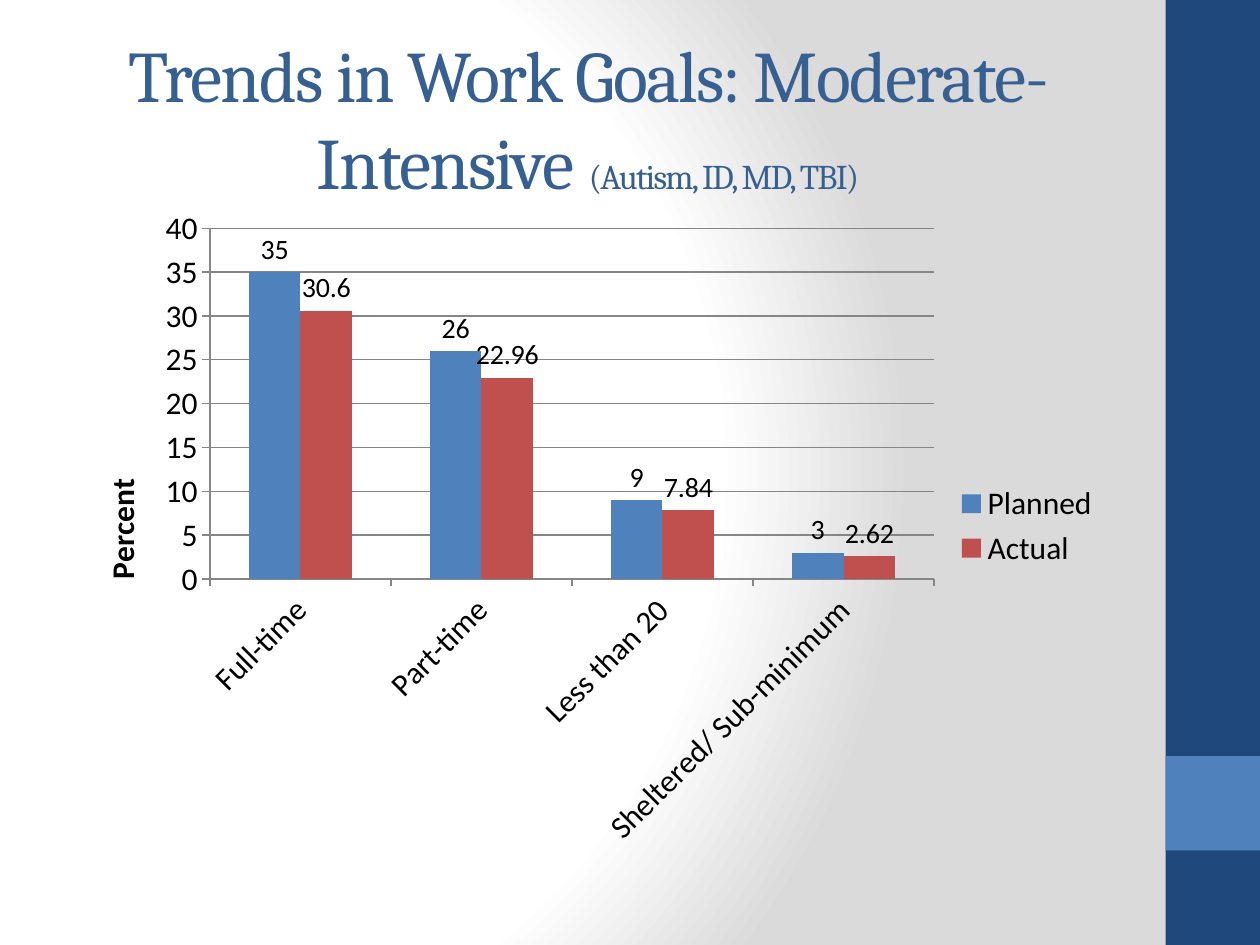
from lxml.etree import SubElement
from pptx import Presentation
from pptx.chart.data import CategoryChartData
from pptx.dml.color import RGBColor
from pptx.enum.chart import XL_CHART_TYPE, XL_LABEL_POSITION, XL_LEGEND_POSITION, XL_TICK_MARK
from pptx.enum.shapes import MSO_SHAPE
from pptx.enum.text import MSO_ANCHOR, PP_ALIGN
from pptx.oxml import parse_xml
from pptx.oxml.ns import nsdecls, qn
from pptx.util import Emu, Pt

PX = 9144  # 100 px to the inch
NAVY, BLUE, RED = "1F497D", "4F81BD", "C0504D"
TITLE_BLUE, BLACK, GRAY = "376092", "000000", "868686"


def px(*lengths):
    return [Emu(length * PX) for length in lengths]


def color(value):
    return RGBColor.from_string(value)


def set_layout(parent, before, inner=False, **fractions):
    """Place a chart part by fractions of the chart's size."""
    for old in parent.findall(qn("c:layout")):
        parent.remove(old)
    layout = parse_xml(f"<c:layout {nsdecls('c')}><c:manualLayout/></c:layout>")
    manual = layout[0]
    if inner:
        SubElement(manual, qn("c:layoutTarget"), val="inner")
    for name in ("x", "y"):
        SubElement(manual, qn(f"c:{name}Mode"), val="edge")
    for name, value in fractions.items():
        SubElement(manual, qn(f"c:{name}"), val=str(value))
    parent.insert(before, layout)


class SlideBuilder:
    title_font, chart_font = "Cambria", "Calibri"

    def __init__(self, slide):
        self.slide = slide

    def background(self, stops):
        gradient_stops = "".join(
            f'<a:gs pos="{position * 1000}"><a:srgbClr val="{value}"/></a:gs>'
            for position, value in stops)
        self.slide.element.cSld.insert(0, parse_xml(
            f'<p:bg {nsdecls("p", "a")}><p:bgPr><a:gradFill rotWithShape="1">'
            f'<a:gsLst>{gradient_stops}</a:gsLst><a:path path="circle">'
            '<a:fillToRect l="20000" t="50000" r="100000" b="50000"/></a:path>'
            '</a:gradFill><a:effectLst/></p:bgPr></p:bg>'))

    def rectangle(self, box, fill):
        shape = self.slide.shapes.add_shape(MSO_SHAPE.RECTANGLE, *px(*box))
        shape.shadow.inherit = False
        shape.fill.solid()
        shape.fill.fore_color.rgb = color(fill)
        shape.line.fill.background()

    def title(self, box, runs):
        frame = self.slide.shapes.add_textbox(*px(*box)).text_frame
        frame.word_wrap = True
        frame.vertical_anchor = MSO_ANCHOR.MIDDLE
        paragraph = frame.paragraphs[0]
        paragraph.alignment = PP_ALIGN.CENTER
        for text, size in runs:
            run = paragraph.add_run()
            run.text = text
            run.font.size = Pt(size)
            run.font.name = self.title_font
            run.font.color.rgb = color(TITLE_BLUE)
            run.font._element.set("spc", "-100")

    def style_font(self, font, size):
        font.size = Pt(size)
        font.name = self.chart_font
        font.color.rgb = color(BLACK)

    def style_line(self, line):
        line.color.rgb = color(GRAY)
        line.width = Pt(0.75)

    def column_chart(self, box, categories, series, axis_title):
        data = CategoryChartData()
        data.categories = categories
        for name, values, _ in series:
            data.add_series(name, values)
        chart = self.slide.shapes.add_chart(
            XL_CHART_TYPE.COLUMN_CLUSTERED, *px(*box), data).chart
        chart.has_title = False
        self.style_font(chart.font, 18)
        self.style_series(chart.plots[0], series)
        self.style_axes(chart, axis_title)
        chart.has_legend = True
        chart.legend.position = XL_LEGEND_POSITION.RIGHT
        chart.legend.include_in_layout = False
        self.style_font(chart.legend.font, 18)
        plot_area = chart.plots[0]._element.getparent()
        set_layout(plot_area, 0, inner=True, x=0.14, y=0.05, w=0.69, h=0.53)

    def style_series(self, plot, series):
        plot.gap_width = 150
        plot.overlap = 0
        plot.vary_by_categories = False
        for column, (_, _, fill) in zip(plot.series, series):
            column.format.fill.solid()
            column.format.fill.fore_color.rgb = color(fill)
            labels = column.data_labels
            labels.show_value = True
            labels.position = XL_LABEL_POSITION.OUTSIDE_END
            self.style_font(labels.font, 16)

    def style_axes(self, chart, axis_title):
        category_axis, value_axis = chart.category_axis, chart.value_axis
        for axis in (category_axis, value_axis):
            axis.major_tick_mark = XL_TICK_MARK.OUTSIDE
            axis.minor_tick_mark = XL_TICK_MARK.NONE
            self.style_line(axis.format.line)
            self.style_font(axis.tick_labels.font, 18)
        category_text = category_axis._element.find(qn("c:txPr"))
        category_text.find(qn("a:bodyPr")).set("rot", "-2700000")
        value_axis.minimum_scale, value_axis.maximum_scale = 0, 40
        value_axis.major_unit = 5
        value_axis.has_major_gridlines = True
        self.style_line(value_axis.major_gridlines.format.line)
        title = value_axis.axis_title
        frame = title.text_frame
        frame._element.find(qn("a:bodyPr")).set("rot", "-5400000")
        run = frame.paragraphs[0].add_run()
        run.text = axis_title
        self.style_font(run.font, 18)
        run.font.bold = True
        set_layout(title._element, 1, x=0.03, y=0.42)


def main():
    presentation = Presentation()
    presentation.slide_width, presentation.slide_height = px(1000, 750)
    builder = SlideBuilder(presentation.slides.add_slide(presentation.slide_layouts[6]))
    builder.background([(0, "FFFFFF"), (75, "FFFFFF"), (100, "DADADA")])
    builder.rectangle((925, 0, 75, 750), NAVY)
    builder.rectangle((925, 600, 75, 75), BLUE)
    builder.title((50, 30, 833, 125), [
        ("Trends in Work Goals: Moderate-Intensive ", 41.4),
        ("(Autism, ID, MD, TBI)", 19.8),
    ])
    builder.column_chart(
        (50, 155, 833, 525),
        ["Full-time", "Part-time", "Less than 20", "Sheltered/ Sub-minimum"],
        [("Planned", (35, 26, 9, 3), BLUE),
         ("Actual", (30.6, 22.96, 7.84, 2.62), RED)],
        "Percent")
    presentation.save("out.pptx")


if __name__ == "__main__":
    main()
